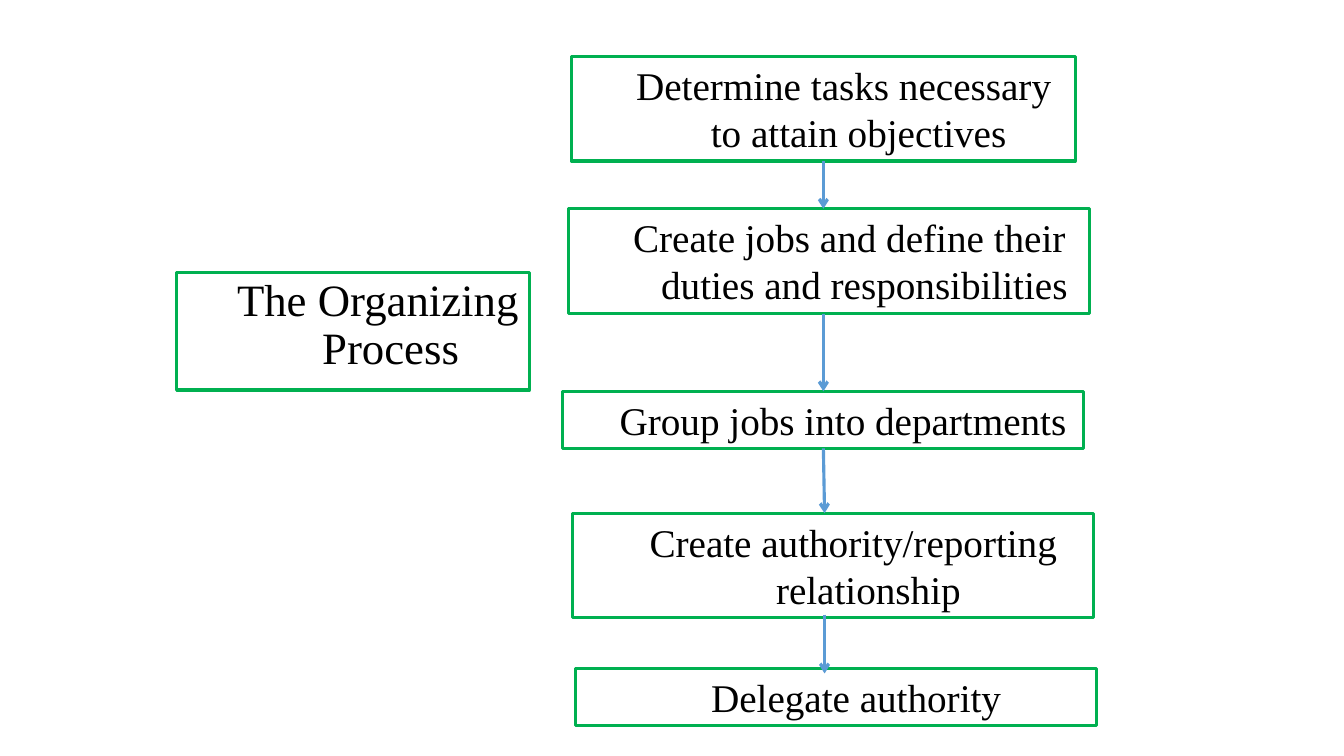
import pptx
import pptx.util
import pptx.dml.color
import pptx.enum.text
import pptx.enum.shapes
import pptx.oxml.ns
import lxml.etree

Cm = pptx.util.Cm
Pt = pptx.util.Pt
COLORS = {"text": "000000", "frame": "00B050", "arrow": "5B9BD5"}
STEPS = [
    ("Determine tasks necessary to attain objectives", 14.4, 1.42, 12.7, 2.64),
    ("Create jobs and define their duties and responsibilities", 14.33, 5.26, 13.13, 2.64),
    ("Group jobs into departments", 14.17, 9.86, 13.13, 1.45),
    ("Create authority/reporting relationship", 14.43, 12.93, 13.13, 2.64),
    ("Delegate authority", 14.5, 16.84, 13.13, 1.45),
]
ARROWS = [
    (20.75, 4.06, 20.75, 5.26),
    (20.75, 7.92, 20.75, 9.86),
    (20.75, 11.3, 20.78, 12.93),
    (20.78, 15.49, 20.78, 16.97),
]


class Chart:
    """Draws the framed boxes and arrows of a flow chart on one slide."""

    font = "Times New Roman"
    width = 2.25

    def __init__(self, slide):
        self.slide = slide

    def color(self, name):
        return pptx.dml.color.RGBColor.from_string(COLORS[name])

    def stroke(self, line, name):
        line.color.rgb = self.color(name)
        line.width = Pt(self.width)

    def fill(self, box, text, size, left, hang, fit):
        self.stroke(box.line, "frame")
        frame = box.text_frame
        frame.word_wrap = True
        frame.auto_size = fit
        frame.vertical_anchor = pptx.enum.text.MSO_ANCHOR.TOP
        frame.text = text
        para = frame.paragraphs[0]
        para.alignment = pptx.enum.text.PP_ALIGN.CENTER
        para.space_before = Pt(0)
        props = para._p.get_or_add_pPr()
        props.set("marL", str(Cm(left)))
        props.set("indent", str(Cm(-hang)))
        para.font.name = self.font
        para.font.size = Pt(size)
        para.font.color.rgb = self.color("text")
        return para

    def title(self, text, x, y, w, h):
        box = self.slide.shapes.title
        box.left, box.top, box.width, box.height = map(Cm, (x, y, w, h))
        fit = pptx.enum.text.MSO_AUTO_SIZE.NONE
        para = self.fill(box, text, 32, 1.9, 0.64, fit)
        para.line_spacing = 0.9

    def step(self, text, x, y, w, h):
        box = self.slide.shapes.add_textbox(*map(Cm, (x, y, w, h)))
        fit = pptx.enum.text.MSO_AUTO_SIZE.SHAPE_TO_FIT_TEXT
        self.fill(box, text, 28, 1.78, 0.76, fit)

    def arrow(self, *ends):
        kind = pptx.enum.shapes.MSO_CONNECTOR.STRAIGHT
        link = self.slide.shapes.add_connector(kind, *map(Cm, ends))
        self.stroke(link.line, "arrow")
        qn = pptx.oxml.ns.qn
        tail = lxml.etree.SubElement(link.line._get_or_add_ln(), qn("a:tailEnd"))
        tail.set("type", "arrow")
        lxml.etree.SubElement(link._element.spPr, qn("a:effectLst"))


def main():
    deck = pptx.Presentation()
    deck.slide_width, deck.slide_height = Cm(33.87), Cm(19.05)
    chart = Chart(deck.slides.add_slide(deck.slide_layouts[5]))
    chart.title("The Organizing Process", 4.45, 6.86, 8.89, 2.97)
    for step in STEPS:
        chart.step(*step)
    for ends in ARROWS:
        chart.arrow(*ends)
    deck.save("out.pptx")


if __name__ == "__main__":
    main()
